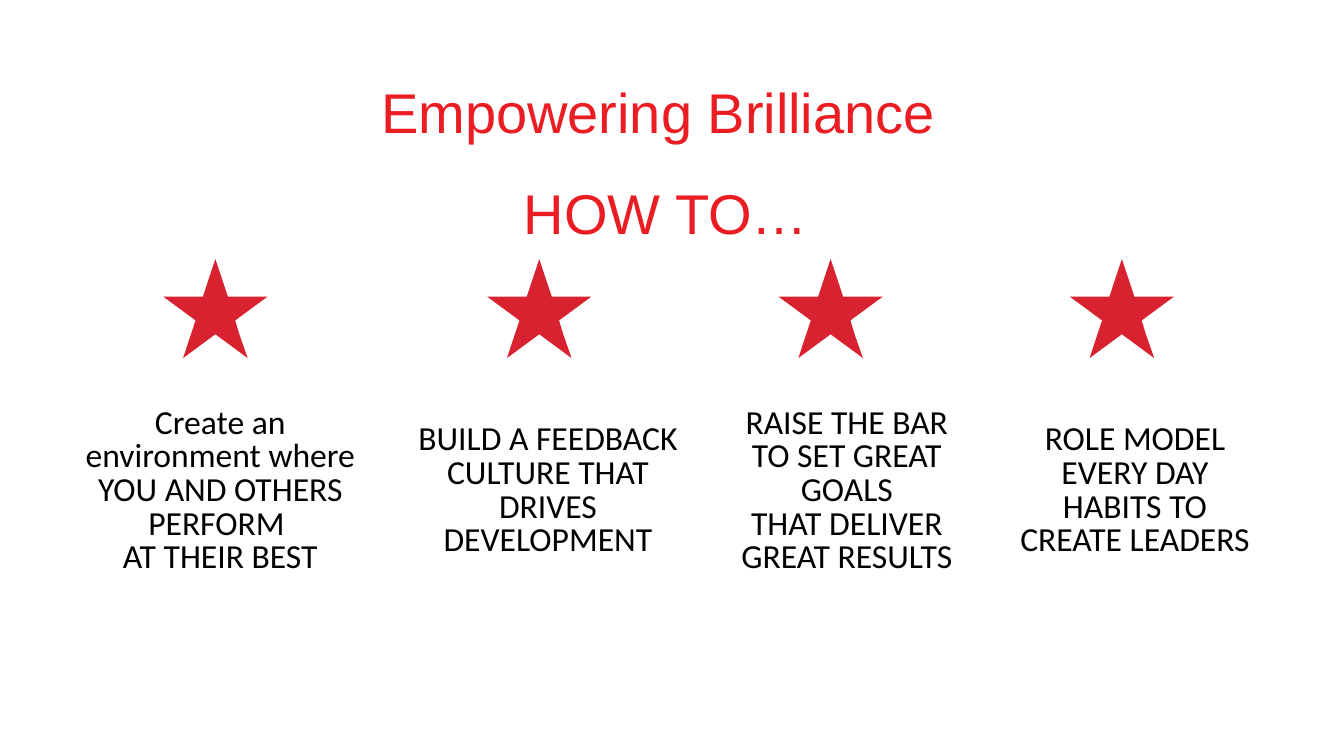
from dataclasses import dataclass

from pptx import Presentation
from pptx import util as u
from pptx.dml.color import RGBColor
from pptx.enum import shapes, text

WIDTH, HEIGHT = u.Inches(13.333), u.Inches(7.5)

TITLE_RED, STAR_RED, WHITE, BLACK = "E91D22", "D8222F", "FFFFFF", "000000"

# Shares of the slide's size, in percent
CARD_TOP, CARD_HEIGHT = 51.33, 27.33
STAR_TOP, STAR_WIDTH, STAR_HEIGHT = 34.27, 7.75, 13.1

# Shares of the star's size, in percent: body, right foot, top point
STAR_PARTS = (
    ((100, 38), (0, 38), (31, 62), (19, 100), (50, 76), (73, 76), (69, 62)),
    ((73, 76), (50, 76), (81, 100)),
    ((50, 0), (38, 38), (62, 38)),
)


@dataclass(frozen=True)
class Step:
    """One piece of advice; lengths are percent of the slide's width."""
    wording: str
    left: float
    width: float
    star_left: float


STEPS = (
    Step("Create an environment where YOU AND OTHERS PERFORM \vAT THEIR BEST",
         6.3, 20.18, 12.15),
    Step("BUILD A FEEDBACK CULTURE THAT DRIVES DEVELOPMENT", 30.83, 19.88, 36.25),
    Step("RAISE THE BAR TO SET GREAT GOALS\vTHAT DELIVER GREAT RESULTS",
         54.68, 16.65, 57.93),
    Step("ROLE MODEL EVERY DAY HABITS TO CREATE LEADERS", 75.75, 17.4, 79.6),
)


def across(percent: float) -> int:
    return round(WIDTH * percent / 100)


def down(percent: float) -> int:
    return round(HEIGHT * percent / 100)


def colour(value: str) -> RGBColor:
    return RGBColor.from_string(value)


def paint(shape, fill: str) -> None:
    """Fill a shape, without outline or shadow."""
    shape.shadow.inherit = False
    shape.fill.solid()
    shape.fill.fore_color.rgb = colour(fill)
    shape.line.fill.background()


def write(shape, wording: str, anchor, font: str, size: int, pitch: int, ink: str) -> None:
    """Set centred text with a fixed line pitch in points."""
    frame = shape.text_frame
    frame.text = wording
    frame.word_wrap = True
    frame.vertical_anchor = anchor
    frame.margin_left = frame.margin_right = frame.margin_top = frame.margin_bottom = 0
    for paragraph in frame.paragraphs:
        paragraph.alignment = text.PP_ALIGN.CENTER
        paragraph.line_spacing = u.Pt(pitch)
        for span in paragraph.runs:
            span.font.name = font
            span.font.size = u.Pt(size)
            span.font.color.rgb = colour(ink)


def draw_star(page, left: float) -> None:
    scale = (across(STAR_WIDTH) / 100, down(STAR_HEIGHT) / 100)
    first, *others = STAR_PARTS
    builder = page.shapes.build_freeform(*first[0], scale=scale)
    builder.add_line_segments(first[1:], close=True)
    for part in others:
        builder.move_to(*part[0])
        builder.add_line_segments(part[1:], close=True)
    paint(builder.convert_to_shape(across(left), down(STAR_TOP)), STAR_RED)


def draw_step(page, step: Step) -> None:
    card = page.shapes.add_shape(
        shapes.MSO_SHAPE.RECTANGLE, across(step.left), down(CARD_TOP),
        across(step.width), down(CARD_HEIGHT))
    paint(card, WHITE)
    write(card, step.wording, text.MSO_ANCHOR.MIDDLE, "Calibri", 24, 24, BLACK)
    draw_star(page, step.star_left)


def draw_title(page) -> None:
    box = page.shapes.add_textbox(across(10.35), down(20), across(78.38), down(12.53))
    write(box, "Empowering Brilliance \nHOW TO…", text.MSO_ANCHOR.BOTTOM,
          "Arial", 40, 72, TITLE_RED)


def main() -> None:
    deck = Presentation()
    deck.slide_width, deck.slide_height = WIDTH, HEIGHT
    page = deck.slides.add_slide(deck.slide_layouts[6])
    for step in STEPS:
        draw_step(page, step)
    draw_title(page)
    deck.save("out.pptx")


if __name__ == "__main__":
    main()
